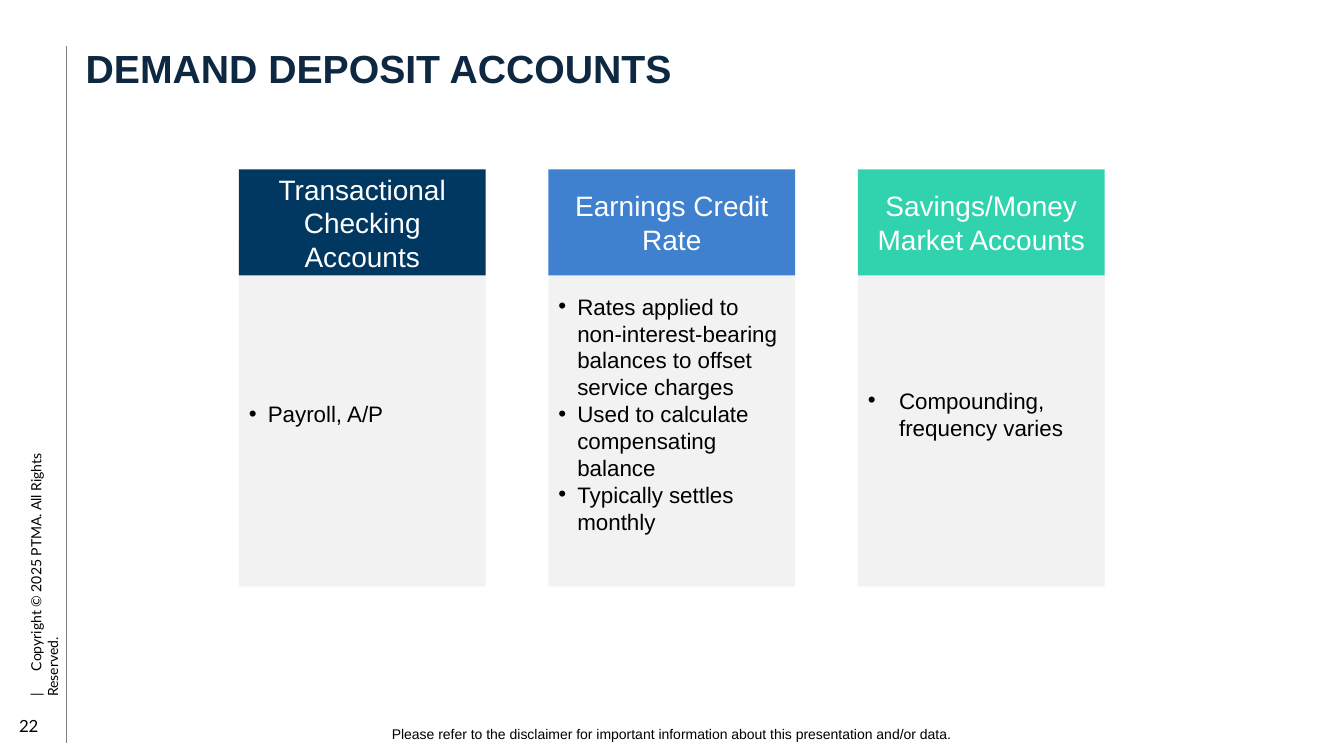
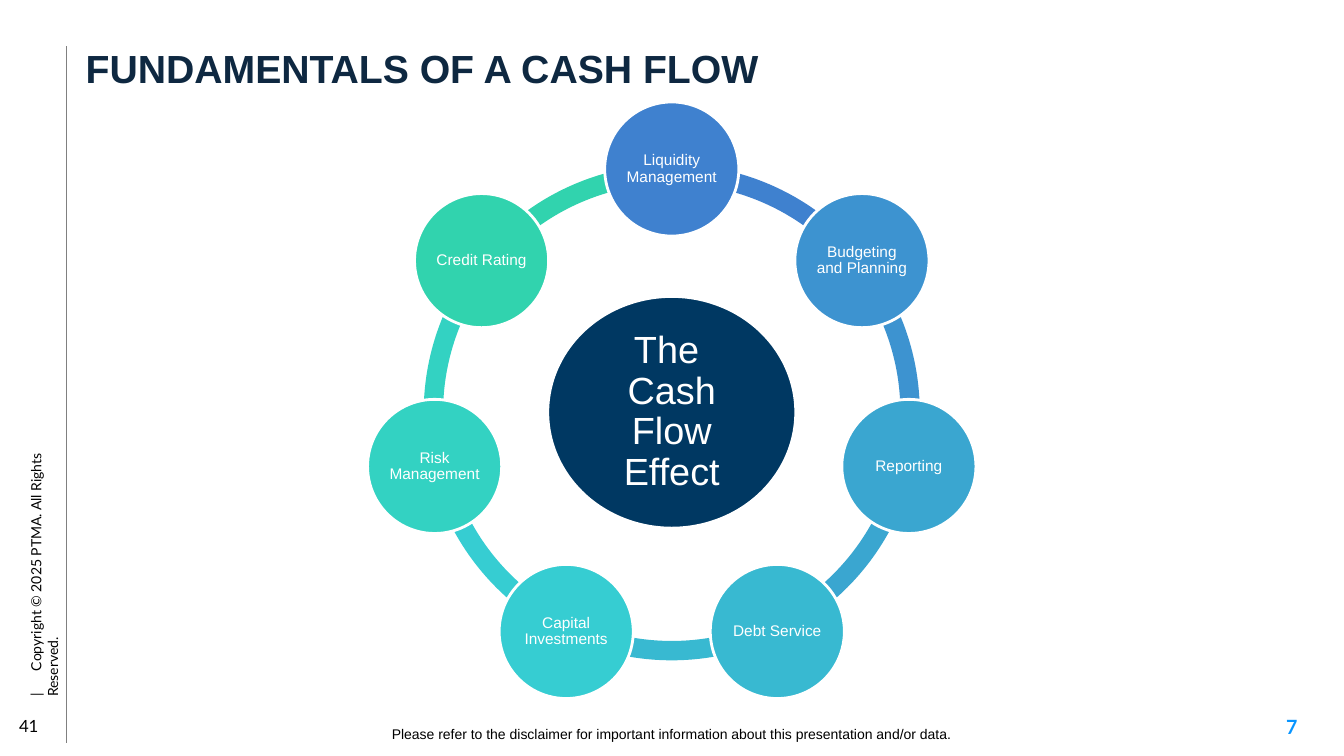
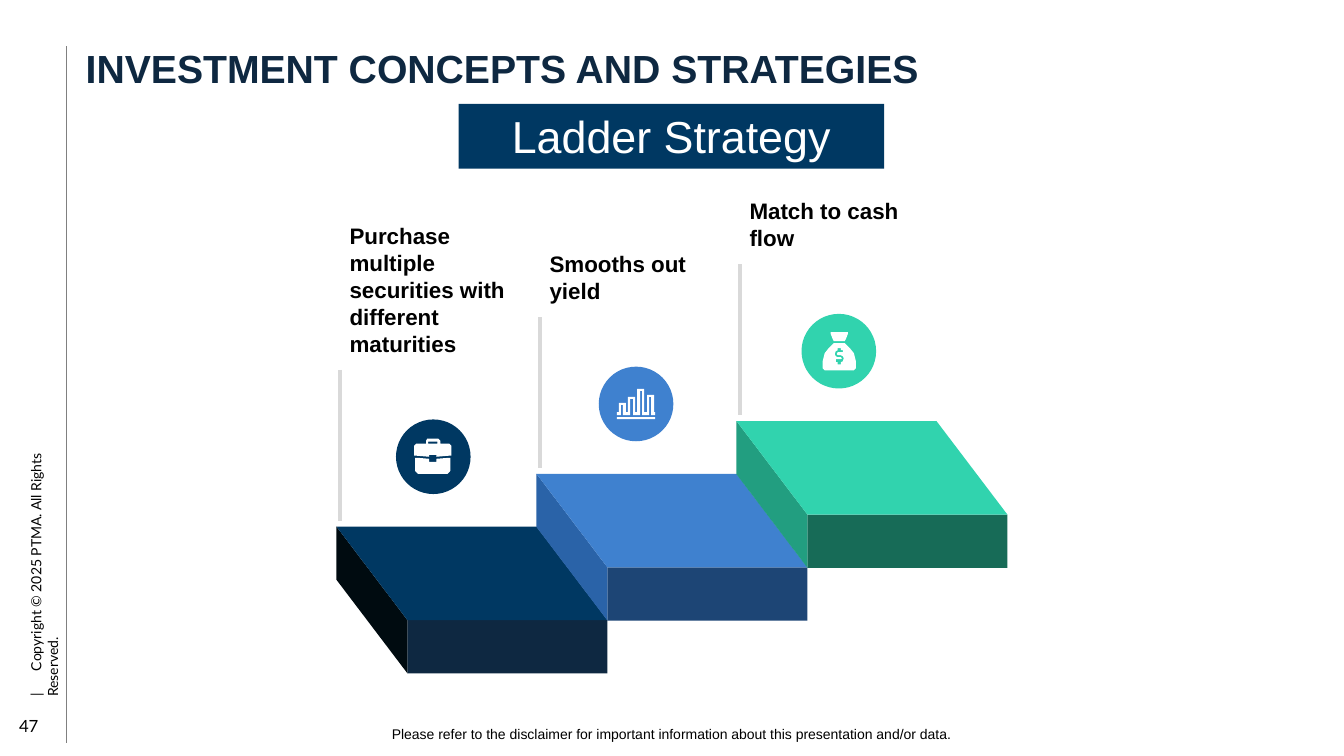
"""Build three treasury slides: deposit accounts, cash flow ring and ladder strategy."""
from math import cos, radians, sin

from lxml.etree import SubElement
from pptx import Presentation
from pptx.dml.color import RGBColor
from pptx.enum.shapes import MSO_CONNECTOR as Connector, MSO_SHAPE as Preset
from pptx.enum.text import MSO_ANCHOR as Anchor, PP_ALIGN as Align
from pptx.oxml.ns import qn
from pptx.util import Cm, Pt

COLORS = {
    "ink": "000000", "white": "FFFFFF", "title": "0E2841", "rule": "808080",
    "panel": "F2F2F2", "post": "D9D9D9", "marker": "0895FF",
    "navy": "003862", "navy_side": "000B10", "navy_front": "0E2841",
    "blue": "3F81CF", "blue_side": "2A63A8", "blue_front": "1D4575",
    "green": "31D3AE", "green_side": "229E80", "green_front": "176B57",
    "ring_2": "3D93D0", "ring_3": "3AA6D0", "ring_4": "38B9D1",
    "ring_5": "36CDD2", "ring_6": "33D2C2",
}
DISCLAIMER = "Please refer to the disclaimer for important information about this presentation and/or data."

CARDS = [
    ("Transactional Checking Accounts", "navy", 0.48, ["Payroll, A/P"]),
    ("Earnings Credit Rate", "blue", 0.48, [
        "Rates applied to non-interest-bearing balances to offset service charges",
        "Used to calculate compensating balance",
        "Typically settles monthly"]),
    ("Savings/Money Market Accounts", "green", 0.79, ["Compounding, frequency varies"]),
]
RING = [
    ("Liquidity Management", "blue"), ("Budgeting and Planning", "ring_2"),
    ("Reporting", "ring_3"), ("Debt Service", "ring_4"),
    ("Capital Investments", "ring_5"), ("Risk Management", "ring_6"),
    ("Credit Rating", "green"),
]
BRIEFCASE = [
    [(19, 38), (21, 38), (33, 39), (33, 42), (40, 42), (40, 39), (53, 38), (54, 38),
     (54, 51), (51, 54), (22, 54), (19, 51)],
    [(32, 22), (32, 24), (41, 24), (41, 22)],
    [(31, 19), (42, 19), (44, 21), (44, 24), (53, 24), (55, 26), (55, 36), (52, 36),
     (40, 37), (40, 35), (33, 35), (33, 37), (21, 36), (18, 36), (18, 26), (20, 24),
     (30, 24), (30, 21)],
]
BAR_CHART = [
    [(18, 50), (56, 50), (56, 52), (18, 52)],
    [(38, 22), (45, 22), (45, 45), (48, 45), (48, 28), (55, 28), (55, 45), (56, 45),
     (56, 48), (52, 48), (52, 30), (50, 30), (50, 48), (43, 48), (43, 24), (41, 24),
     (41, 48), (34, 48), (34, 32), (31, 32), (31, 48), (24, 48), (24, 38), (22, 38),
     (22, 48), (18, 48), (18, 45), (20, 45), (20, 36), (27, 36), (27, 45), (29, 45),
     (29, 30), (36, 30), (36, 45), (38, 45)],
]
MONEY_BAG = [
    [(36, 34), (36, 36), (34, 37), (33, 40), (34, 42), (36, 43), (39, 43), (40, 44),
     (39, 45), (34, 45), (34, 48), (36, 48), (36, 50), (39, 50), (39, 48), (41, 47),
     (42, 44), (41, 42), (39, 41), (36, 41), (35, 40), (36, 38), (41, 38), (41, 36),
     (39, 36), (39, 34)],
    [(32, 29), (43, 29), (48, 34), (52, 39), (54, 47), (54, 54), (52, 56), (23, 56),
     (21, 54), (21, 47), (23, 39), (27, 34)],
    [(29, 18), (46, 18), (46, 20), (44, 25), (43, 27), (32, 27), (31, 25), (29, 20)],
]
STEPS = [
    ("Purchase multiple securities with different maturities", "navy", BRIEFCASE, 3.68),
    ("Smooths out yield", "blue", BAR_CHART, 1.63),
    ("Match to cash flow", "green", MONEY_BAG, 1.63),
]


def rgb(name):
    """Return a palette colour."""
    return RGBColor.from_string(COLORS[name])


def write(shape, lines, size, color="ink", font="Arial", bold=False, align=Align.LEFT,
          anchor=Anchor.TOP, insets=(0.25, 0.13), spacing=None, bullet=None, tab=None):
    """Fill a shape with paragraphs; a newline inside one becomes a line break."""
    frame = shape.text_frame
    frame.word_wrap = True
    frame.vertical_anchor = anchor
    frame.margin_left = frame.margin_right = Cm(insets[0])
    frame.margin_top = frame.margin_bottom = Cm(insets[1])
    for number, line in enumerate(lines):
        paragraph = frame.add_paragraph() if number else frame.paragraphs[0]
        paragraph.alignment = align
        if spacing:
            paragraph.line_spacing = spacing
        properties = paragraph._p.get_or_add_pPr()
        if bullet:
            properties.set("marL", str(Cm(bullet)))
            properties.set("indent", str(-Cm(bullet)))
            SubElement(properties, qn("a:buFont"), typeface="Arial")
            SubElement(properties, qn("a:buChar"), char="•")
        if tab:
            tabs = SubElement(properties, qn("a:tabLst"))
            SubElement(tabs, qn("a:tab"), pos=str(Cm(tab)), algn="l")
        for part_number, part in enumerate(line.split("\n")):
            if part_number:
                paragraph.add_line_break()
            run = paragraph.add_run()
            run.text = part
            run.font.size = Pt(size)
            run.font.name = font
            run.font.bold = bold
            run.font.color.rgb = rgb(color)


def add_text(slide, box, text, size, **style):
    """Add a text box; box is left, top, width, height in centimetres."""
    shape = slide.shapes.add_textbox(*map(Cm, box))
    write(shape, [text], size, **style)
    return shape


def paint(shape, color, border=None):
    """Give a shape a flat fill and an optional border."""
    shape.shadow.inherit = False
    shape.fill.solid()
    shape.fill.fore_color.rgb = rgb(color)
    if border:
        shape.line.color.rgb = rgb(border)
        shape.line.width = Pt(2)
    else:
        shape.line.fill.background()


def add_block(slide, preset, box, color, border=None):
    """Add a flat preset shape."""
    shape = slide.shapes.add_shape(preset, *map(Cm, box))
    paint(shape, color, border)
    return shape


def add_circle(slide, center, width, height, color, border=None):
    """Add an ellipse around a centre point."""
    box = (center[0] - width / 2, center[1] - height / 2, width, height)
    return add_block(slide, Preset.OVAL, box, color, border)


def add_outline(slide, left, top, contours, color, unit=0.01):
    """Add a filled outline whose points count in units of centimetres."""
    builder = slide.shapes.build_freeform(*contours[0][0], scale=Cm(unit))
    for number, contour in enumerate(contours):
        if number:
            builder.move_to(*contour[0])
        builder.add_line_segments(contour[1:], close=True)
    paint(builder.convert_to_shape(Cm(left), Cm(top)), color)


def add_vertical_line(slide, left, top, bottom, color, width):
    """Add an upright line."""
    line = slide.shapes.add_connector(Connector.STRAIGHT, Cm(left), Cm(top), Cm(left), Cm(bottom))
    line.line.color.rgb = rgb(color)
    line.line.width = Pt(width)
    SubElement(line._element.spPr, qn("a:effectLst"))


def add_base_slide(presentation, title, number):
    """Add a slide with the shared rule, copyright, title, number and disclaimer."""
    slide = presentation.slides.add_slide(presentation.slide_layouts[6])
    add_vertical_line(slide, 1.68, 1.17, 18.72, "rule", 0.75)
    notice = add_text(slide, (-3.02, 13.54, 7.85, 0.69),
                      "|\tCopyright © 2025 PTMA. All Rights Reserved.", 10, font="Lato", tab=0.65)
    notice.rotation = 270
    add_text(slide, (2.16, 1.24, 30.86, 0.94), title, 28, color="title", bold=True,
             insets=(0, 0), spacing=0.9)
    add_text(slide, (0.15, 17.78, 1.07, 1.02), number, 12, font="Lato",
             align=Align.RIGHT, anchor=Anchor.MIDDLE)
    add_text(slide, (7.77, 18.14, 18.29, 0.69), DISCLAIMER, 10, align=Align.CENTER)
    return slide


def add_card(slide, left, heading, color, indent, points):
    """Add a headed card with bullet points."""
    body = add_block(slide, Preset.RECTANGLE, (left, 6.07, 6.22, 8.71), "panel")
    write(body, points, 16, anchor=Anchor.MIDDLE, bullet=indent)
    header = add_block(slide, Preset.RECTANGLE, (left, 4.27, 6.22, 2.67), color)
    write(header, [heading], 20, color="white", align=Align.CENTER, anchor=Anchor.MIDDLE,
          insets=(0.13, 0.08))


def add_ring(slide, center, radius, nodes):
    """Add a ring of coloured arcs with a labelled circle at each joint."""
    size, step = 12.5, 360 / len(nodes)
    angles = [270 + step * index for index in range(len(nodes))]
    ring_box = (center[0] - size / 2, center[1] - size / 2, size, size)
    for angle, (_, color) in zip(angles, nodes):
        arc = add_block(slide, Preset.BLOCK_ARC, ring_box, color)
        arc.adjustments[0] = angle % 360 * 0.6
        arc.adjustments[1] = (angle + step) % 360 * 0.6
        arc.adjustments[2] = 0.039
    for angle, (label, color) in zip(angles, nodes):
        joint = (center[0] + radius * cos(radians(angle)), center[1] + radius * sin(radians(angle)))
        node = add_circle(slide, joint, 3.38, 3.38, color, "white")
        write(node, [label], 11, color="white", align=Align.CENTER, anchor=Anchor.MIDDLE,
              insets=(0.04, 0.04), spacing=0.9)


def add_step(slide, index, label, color, icon, label_height):
    """Add one stair with its post, label and icon badge."""
    left, top = 8.48 + 5.04 * index, 13.27 - 1.33 * index
    width, height, shift, depth = 504, 134, 179, 236
    side = [(0, 0), (shift, depth), (shift, depth + height), (0, height)]
    tread = [(0, 0), (width, 0), (width + shift, depth), (shift, depth)]
    add_vertical_line(slide, left + 0.08, top - 3.95, top - 0.14, "post", 3)
    add_block(slide, Preset.RECTANGLE, (left + 1.79, top + 2.36, 5.04, 1.34), color + "_front")
    add_outline(slide, left, top, [side], color + "_side")
    add_outline(slide, left, top, [tread], color)
    badge_left, badge_top = left + 1.5 + 0.07 * index, top - 2.7
    add_block(slide, Preset.OVAL, (badge_left, badge_top, 1.88, 1.88), color)
    add_outline(slide, badge_left, badge_top, icon, "white", unit=0.0254)
    add_text(slide, (left + 0.08, top - 4.15 - label_height, 4.75, label_height), label, 16,
             bold=True, anchor=Anchor.BOTTOM)


def add_accounts_slide(presentation):
    """Add the three account cards."""
    slide = add_base_slide(presentation, "DEMAND DEPOSIT ACCOUNTS", "22")
    for index, card in enumerate(CARDS):
        add_card(slide, 6.02 + 7.8 * index, *card)


def add_cash_flow_slide(presentation):
    """Add the cash flow ring around its hub."""
    slide = add_base_slide(presentation, "FUNDAMENTALS OF A CASH FLOW", "41")
    center = (16.93, 10.39)
    add_ring(slide, center, 6.13, RING)
    hub = add_circle(slide, center, 6.25, 5.84, "navy", "white")
    write(hub, ["The \nCash Flow Effect"], 27, color="white", align=Align.CENTER,
          anchor=Anchor.MIDDLE, insets=(0.1, 0.1), spacing=0.9)
    add_text(slide, (32.16, 17.88, 0.91, 0.86), "7", 14, color="marker", font="Lato", bold=True)


def add_ladder_slide(presentation):
    """Add the ladder strategy stairs."""
    slide = add_base_slide(presentation, "INVESTMENT CONCEPTS AND STRATEGIES", "47")
    banner = add_block(slide, Preset.RECTANGLE, (11.56, 2.62, 10.72, 1.63), "navy")
    write(banner, ["Ladder Strategy"], 32, color="white", align=Align.CENTER)
    for index, step in enumerate(STEPS):
        add_step(slide, index, *step)


def main():
    """Build and save the presentation."""
    presentation = Presentation()
    presentation.slide_width, presentation.slide_height = Cm(33.87), Cm(19.05)
    add_accounts_slide(presentation)
    add_cash_flow_slide(presentation)
    add_ladder_slide(presentation)
    presentation.save("out.pptx")


if __name__ == "__main__":
    main()
